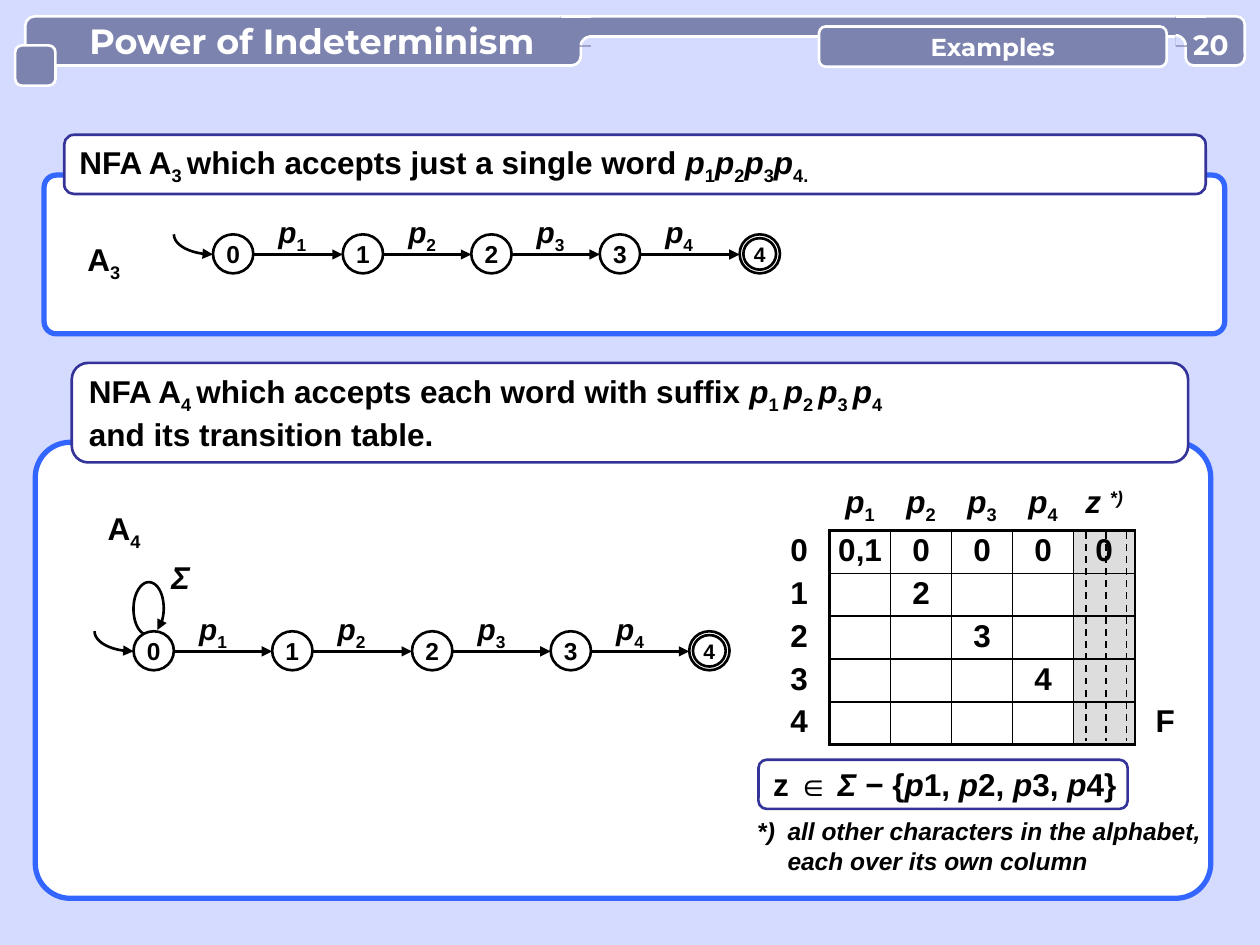
from lxml.etree import SubElement
from pptx import Presentation
from pptx.dml.color import RGBColor
from pptx.enum.dml import MSO_LINE
from pptx.enum.shapes import MSO_CONNECTOR, MSO_SHAPE
from pptx.enum.text import MSO_ANCHOR, PP_ALIGN
from pptx.oxml.ns import qn
from pptx.util import Inches, Pt

C = {"bg": "D5DAFF", "bar": "7D83AF", "white": "FFFFFF", "black": "000000",
     "frame": "3366FF", "caption": "333399", "grey": "DDDDDD"}

# Content. Runs are split by "|"; a run may open with / italic, _ subscript, ^ superscript
TITLE, SECTION, PAGE = "Power of Indeterminism", "Examples", "20"
FRAMES = [(0.28, 3.51, 9.33, 3.62), (0.35, 1.39, 9.37, 1.26)]
CAPTIONS = [
    ((0.51, 1.07, 9.06, 0.47),
     ["NFA A|_3 |which accepts just a single word |/p|_1|/p|_2|/p|_3|/p|_4."]),
    ((0.57, 2.88, 8.86, 0.79),
     ["NFA A|_4 |which accepts each word with suffix |/p|_1 |/p|_2 |/p|_3 |/p|_4",
      "and its transition table."]),
    ((6.02, 6.03, 2.93, 0.39),
     ["z ∈ |/Σ |− {|/p|1, |/p|2, |/p|3, |/p|4}"]),
]
AUTOMATA = [  # top of the states, left of each state
    (1.86, [1.69, 2.72, 3.74, 4.76, 5.87]),
    (5.01, [1.06, 2.16, 3.27, 4.37, 5.47]),
]
NAMES = [("A|_3", (0.59, 1.86, 0.47, 0.4)), ("A|_4", (0.75, 3.99, 0.47, 0.4)),
         ("/Σ", (1.26, 4.38, 0.35, 0.4))]
TABLE = [
    ["", "/p|_1", "/p|_2", "/p|_3", "/p|_4", "/z |^/*)", ""],
    ["0", "0,1", "0", "0", "0", "0", ""],
    ["1", "", "2", "", "", "", ""],
    ["2", "", "", "3", "", "", ""],
    ["3", "", "", "", "4", "", ""],
    ["4", "", "", "", "", "", "F"],
]
FOOTNOTE = ["/*)\tall other characters in the alphabet,", "/each over its own column"]

prs = Presentation()
prs.slide_width, prs.slide_height = Inches(10), Inches(7.5)
s = prs.slides.add_slide(prs.slide_layouts[6])
s.background.fill.solid()
s.background.fill.fore_color.rgb = RGBColor.from_string(C["bg"])


def write(tf, lines, size=18, color="black", font="Arial", align=PP_ALIGN.LEFT,
          wrap=False, anchor=MSO_ANCHOR.MIDDLE):
    tf.word_wrap, tf.vertical_anchor = wrap, anchor
    for n, line in enumerate(lines):
        p = tf.paragraphs[0] if n == 0 else tf.add_paragraph()
        p.alignment = align
        p.font.name, p.font.size, p.font.bold = font, Pt(size), True
        p.font.color.rgb = RGBColor.from_string(C[color])
        for part in line.split("|"):
            r = p.add_run()
            r.text = part.lstrip("/_^")
            marks = part[:len(part) - len(r.text)]
            if "/" in marks:
                r.font.italic = True
            if "_" in marks or "^" in marks:
                r.font._element.set("baseline", "-25000" if "_" in marks else "30000")


def paint(sp, fill, line=None, width=1.5):
    sp.shadow.inherit = False
    if fill:
        sp.fill.solid()
        sp.fill.fore_color.rgb = RGBColor.from_string(C[fill])
    else:
        sp.fill.background()
    if line:
        sp.line.color.rgb = RGBColor.from_string(C[line])
        sp.line.width = Pt(width)
    else:
        sp.line.fill.background()
    return sp


def shape(kind, box, fill="white", line=None, width=1.5, adj=None):
    sp = s.shapes.add_shape(kind, *map(Inches, box))
    if adj is not None:
        sp.adjustments[0] = adj
    return paint(sp, fill, line, width)


def text(box, lines, margins=None, **style):
    tf = s.shapes.add_textbox(*map(Inches, box)).text_frame
    if margins is not None:
        tf.margin_left = tf.margin_right = tf.margin_top = tf.margin_bottom = Inches(margins)
    write(tf, lines, **style)
    return tf


def arrowhead(sp):
    SubElement(sp.line._get_or_add_ln(), qn("a:tailEnd"), type="triangle")


def line(x1, y1, x2, y2, color="black", width=1.5):
    c = s.shapes.add_connector(MSO_CONNECTOR.STRAIGHT, *map(Inches, (x1, y1, x2, y2)))
    c.line.color.rgb = RGBColor.from_string(C[color])
    c.line.width = Pt(width)
    SubElement(c._element.spPr, qn("a:effectLst"))
    return c


def bezier(points, steps=12):
    """Points along chained cubic curves: start, then two controls and an end for each."""
    out = [points[0]]
    for n in range(0, len(points) - 1, 3):
        for k in range(1, steps + 1):
            t = k / steps
            w = ((1 - t) ** 3, 3 * t * (1 - t) ** 2, 3 * t * t * (1 - t), t ** 3)
            out.append(tuple(sum(a * q[d] for a, q in zip(w, points[n:n + 4]))
                             for d in (0, 1)))
    return out


def outline(points, closed=False):
    pts = [(Inches(x), Inches(y)) for x, y in points]
    fb = s.shapes.build_freeform(*pts[0])
    fb.add_line_segments(pts[1:], close=closed)
    return fb.convert_to_shape()


def curve(points, color="black", head=True):
    sp = paint(outline(bezier(points)), None, color)
    if head:
        arrowhead(sp)


def automaton(y, lefts):
    mid, last = y + 0.16, len(lefts) - 1
    for n, x in enumerate(lefts):
        sp = shape(MSO_SHAPE.OVAL, (x, y, 0.32, 0.31), line="black")
        if n == last:
            sp = shape(MSO_SHAPE.OVAL, (x + 0.03, y + 0.03, 0.26, 0.25), line="black")
        write(sp.text_frame, [str(n)], size=12 if n == last else 14, align=PP_ALIGN.CENTER)
        if n < last:
            text((x + 0.47, y - 0.16, 0.32, 0.32), [f"/p|_{n + 1}"], margins=0, size=17,
                 align=PP_ALIGN.CENTER, wrap=True, anchor=MSO_ANCHOR.TOP)
            arrowhead(line(x + 0.32, mid, lefts[n + 1], mid))
    x = lefts[0]
    curve([(x - 0.31, y), (x - 0.31, y + 0.09), (x - 0.17, mid), (x, mid)])


def junction(square_x, start, corner_x):
    """Joins a header tab to the thin bar with a rounded inner corner."""
    (x1, y1), (x2, y2) = start, (corner_x, 0.36)
    shape(MSO_SHAPE.RECTANGLE, (square_x, 0.13, 0.24, 0.24), "bar")
    line(square_x, 0.13, square_x + 0.24, 0.13, "white")
    arc = [start, ((x1 + x2) / 2, y1), (x2, (y1 + y2) / 2), (x2, y2)]
    paint(outline(bezier(arc) + [(x1, y2)], closed=True), "bg")
    curve(arc, "white", head=False)


# Frames, automata and captions
for box in FRAMES:
    shape(MSO_SHAPE.ROUNDED_RECTANGLE, box, line="frame", width=3, adj=0.077)
curve([(1.18, 5.04), (1.11, 5.04), (1.06, 4.95), (1.06, 4.83), (1.06, 4.71), (1.12, 4.62),
       (1.18, 4.62), (1.25, 4.62), (1.3, 4.71), (1.3, 4.83), (1.3, 4.9), (1.28, 4.96), (1.25, 5)])
for y, lefts in AUTOMATA:
    automaton(y, lefts)
for box, lines in CAPTIONS:
    sp = shape(MSO_SHAPE.ROUNDED_RECTANGLE, box, line="caption", adj=0.165)
    write(sp.text_frame, lines)
for name, box in NAMES:
    text(box, [name], align=PP_ALIGN.CENTER, anchor=MSO_ANCHOR.TOP)

# Transition table: the ruled grid is rows 1-5 by columns 1-5
tbl = s.shapes.add_table(6, 7, Inches(6.1), Inches(3.83), Inches(3.39), Inches(2.08)).table
tbl.first_row = tbl.horz_banding = False
for col in tbl.columns:
    col.width = Inches(3.39 / 7)
for i, row in enumerate(tbl.rows):
    row.height = Inches(0.34 if i else 0.38)


def border(tcPr, tag, edge, across):
    ruled = 1 <= edge <= 6 and 1 <= across <= 5
    ln = SubElement(tcPr, qn(tag), w=str(Pt(1.5 if edge in (1, 6) else 1)))
    if ruled:
        SubElement(SubElement(ln, qn("a:solidFill")), qn("a:srgbClr"), val=C["black"])
    else:
        SubElement(ln, qn("a:noFill"))


for i, row in enumerate(TABLE):
    for j, value in enumerate(row):
        cell = tbl.cell(i, j)
        cell.margin_left = cell.margin_right = cell.margin_top = cell.margin_bottom = Inches(0.02)
        write(cell.text_frame, [value], align=PP_ALIGN.CENTER, wrap=True, anchor=MSO_ANCHOR.TOP)
        tcPr = cell._tc.get_or_add_tcPr()
        for tag, edge, across in (("a:lnL", j, i), ("a:lnR", j + 1, i),
                                  ("a:lnT", i, j), ("a:lnB", i + 1, j)):
            border(tcPr, tag, edge, across)
        if i and j == 5:
            cell.fill.solid()
            cell.fill.fore_color.rgb = RGBColor.from_string(C["grey"])
        else:
            cell.fill.background()
for n in range(3):
    x = 8.62 + 0.16 * n
    line(x, 4.22, x, 5.88, width=1).line.dash_style = MSO_LINE.DASH

# Footnote with a hanging indent
tf = text((5.96, 6.43, 3.68, 0.57), FOOTNOTE, margins=0.05, size=14, wrap=True,
          anchor=MSO_ANCHOR.TOP)
for p, indent in zip(tf.paragraphs, (-0.24, 0)):
    pPr = p._p.get_or_add_pPr()
    pPr.set("marL", str(Inches(0.24)))
    pPr.set("indent", str(Inches(indent)))

# Header
HEADER = {"color": "white", "font": "Montserrat", "align": PP_ALIGN.CENTER}
tab = shape(MSO_SHAPE.ROUNDED_RECTANGLE, (0.2, 0.13, 4.41, 0.39), "bar", "white", adj=0.188)
tab.text_frame.margin_left = Inches(0.24)
write(tab.text_frame, [TITLE], size=20, **HEADER)
shape(MSO_SHAPE.ROUNDED_RECTANGLE, (4.61, 0.13, 4.88, 0.16), "bar", "white", adj=0.5)
junction(4.45, (4.69, 0.29), 4.61)
for box in ((0.12, 0.36, 0.32, 0.32), (9.41, 0.13, 0.47, 0.39)):
    shape(MSO_SHAPE.ROUNDED_RECTANGLE, box, "bar", "white", adj=0.17)
junction(9.33, (9.33, 0.28), 9.41)
tab = shape(MSO_SHAPE.ROUNDED_RECTANGLE, (6.5, 0.21, 2.76, 0.32), "bar", "white", adj=0.17)
write(tab.text_frame, [SECTION], size=14, **HEADER)
text((9.41, 0.22, 0.4, 0.27), [PAGE], margins=0, size=16, **HEADER)

prs.save("out.pptx")
